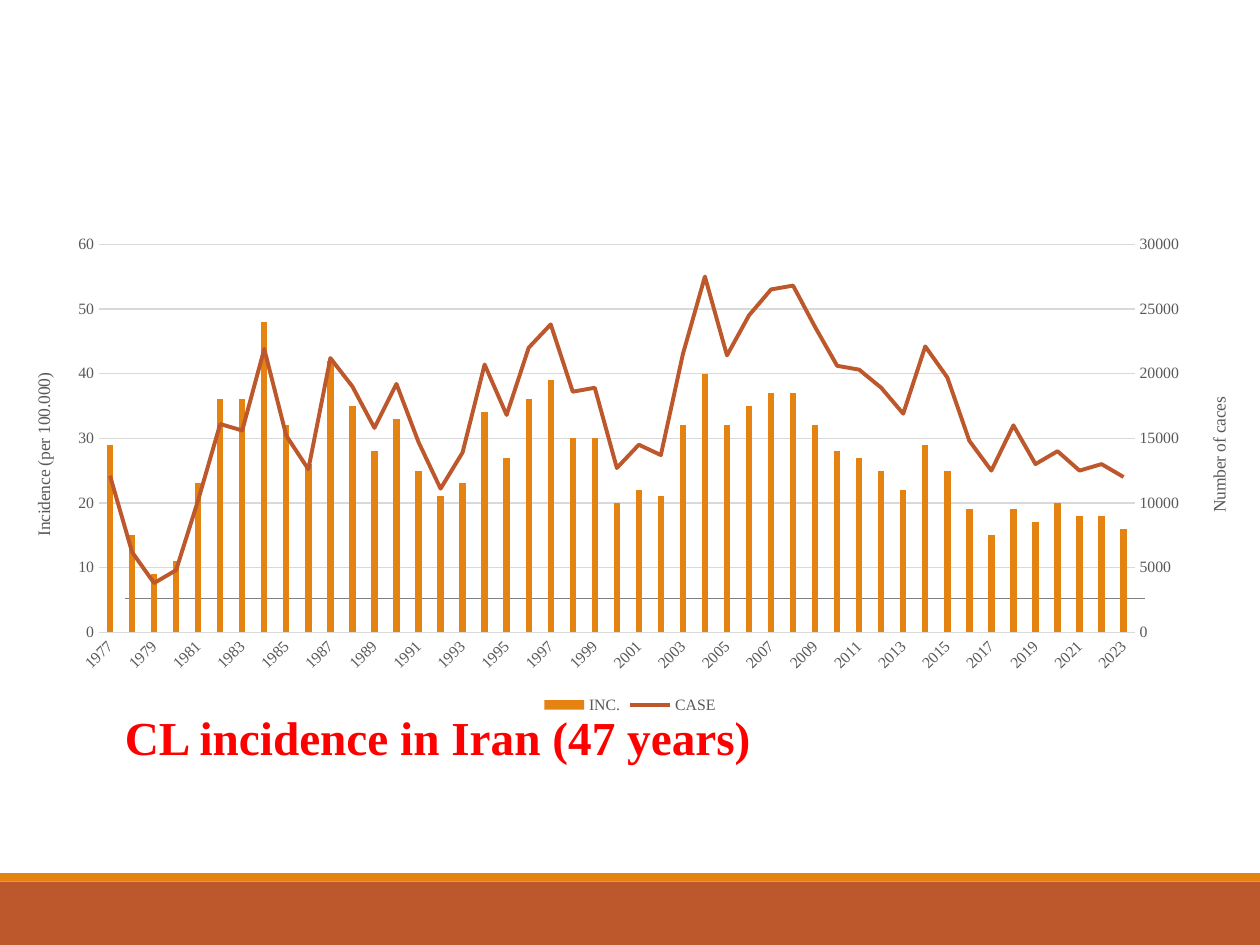
import copy
import dataclasses

import pptx
import pptx.chart.axis
import pptx.chart.data
import pptx.dml.color
import pptx.enum.chart
import pptx.enum.shapes
import pptx.enum.text
import pptx.oxml
import pptx.oxml.ns
import pptx.util

qn = pptx.oxml.ns.qn
WIDTH, HEIGHT = pptx.util.Inches(10), pptx.util.Inches(7.5)


@dataclasses.dataclass(frozen=True)
class Theme:
    font: str = "Times New Roman"
    incidence: str = "E48312"
    cases: str = "BD582C"
    heading: str = "FF0000"
    text: str = "000000"
    muted: str = "595959"
    grid: str = "D9D9D9"
    rule: str = "808080"
    heading_size: float = 27
    axis_title_size: float = 10
    label_size: float = 9


THEME = Theme()
YEARS = [str(year) for year in range(1977, 2024)]
INCIDENCE = [
    29, 15, 9, 11, 23, 36, 36, 48, 32, 26, 42, 35, 28, 33, 25, 21,
    23, 34, 27, 36, 39, 30, 30, 20, 22, 21, 32, 40, 32, 35, 37, 37,
    32, 28, 27, 25, 22, 29, 25, 19, 15, 19, 17, 20, 18, 18, 16,
]
CASES = [
    12100, 6200, 3800, 4800, 10200, 16100, 15600, 21900, 15200, 12600,
    21200, 19000, 15800, 19200, 14700, 11100, 13900, 20700, 16800, 22000,
    23800, 18600, 18900, 12700, 14500, 13700, 21500, 27500, 21400, 24500,
    26500, 26800, 23600, 20600, 20300, 18900, 16900, 22100, 19700, 14800,
    12500, 16000, 13000, 14000, 12500, 13000, 12000,
]


def percent(left, top, width, height):
    lengths = (left * WIDTH, top * HEIGHT, width * WIDTH, height * HEIGHT)
    return [round(length / 100) for length in lengths]


def rgb(color):
    return pptx.dml.color.RGBColor.from_string(color)


def style_font(font, size, color, bold=False):
    font.name = THEME.font
    font.size = pptx.util.Pt(size)
    font.bold = bold
    font.color.rgb = rgb(color)


def write_text(frame, text, size, color, bold=False, align=None):
    paragraph = frame.paragraphs[0]
    paragraph.alignment = align
    run = paragraph.add_run()
    run.text = text
    style_font(run.font, size, color, bold)


def style_line(line, color, width):
    line.color.rgb = rgb(color)
    line.width = pptx.util.Pt(width)


def chart_xml(markup):
    return pptx.oxml.parse_xml(markup.replace(">", f' {pptx.oxml.ns.nsdecls("c", "a")}>', 1))


def layout_xml(inner=False, **percents):
    target = '<c:layoutTarget val="inner"/>' if inner else ""
    modes = '<c:xMode val="edge"/><c:yMode val="edge"/>'
    parts = "".join(f'<c:{key} val="{value / 100}"/>' for key, value in percents.items())
    return chart_xml(f"<c:layout><c:manualLayout>{target}{modes}{parts}</c:manualLayout></c:layout>")


def add_band(slide, top, height, color):
    band = slide.shapes.add_shape(
        pptx.enum.shapes.MSO_SHAPE.RECTANGLE, *percent(0, top, 100, height))
    band.shadow.inherit = False
    band.fill.solid()
    band.fill.fore_color.rgb = rgb(color)
    band.line.fill.background()


def add_rule(slide, left, right, y):
    rule = slide.shapes.add_connector(
        pptx.enum.shapes.MSO_CONNECTOR.STRAIGHT, *percent(left, y, right, y))
    style_line(rule.line, THEME.rule, 0.5)
    rule._element.spPr.append(chart_xml("<a:effectLst></a:effectLst>"))


def add_heading(slide, text):
    heading = slide.shapes.title
    heading.left, heading.top, heading.width, heading.height = percent(8.9, 74.2, 71.2, 7.5)
    frame = heading.text_frame
    frame.word_wrap = True
    frame.auto_size = pptx.enum.text.MSO_AUTO_SIZE.NONE
    frame.vertical_anchor = pptx.enum.text.MSO_ANCHOR.MIDDLE
    write_text(frame, text, THEME.heading_size, THEME.heading, bold=True,
               align=pptx.enum.text.PP_ALIGN.LEFT)


def style_axis(axis):
    axis.major_tick_mark = axis.minor_tick_mark = pptx.enum.chart.XL_TICK_MARK.NONE
    style_font(axis.tick_labels.font, THEME.label_size, THEME.muted)


def style_value_axis(axis, title, x, y, maximum, step):
    style_axis(axis)
    axis.minimum_scale, axis.maximum_scale, axis.major_unit = 0, maximum, step
    axis.format.line.fill.background()
    axis.tick_labels.number_format = "General"
    axis.tick_labels.number_format_is_linked = False
    frame = axis.axis_title.text_frame
    write_text(frame, title, THEME.axis_title_size, THEME.muted)
    body = frame._txBody.find(qn("a:bodyPr"))
    body.set("rot", "-5400000")
    body.set("vert", "horz")
    title_element = axis._element.find(qn("c:title"))
    for old in title_element.findall(qn("c:layout")):
        title_element.remove(old)
    title_element.find(qn("c:tx")).addnext(layout_xml(x=x, y=y))


def move_cases_to_right_axis(chart):
    bars = chart.plots[0]._element
    plot_area = bars.getparent()
    cases = bars.findall(qn("c:ser"))[1]
    for flag in cases.findall(qn("c:invertIfNegative")):
        cases.remove(flag)
    lines = chart_xml(
        '<c:lineChart><c:grouping val="standard"/><c:varyColors val="0"/>'
        '<c:marker val="1"/><c:axId val="5001"/><c:axId val="5002"/></c:lineChart>')
    lines.insert(2, cases)
    bars.addnext(lines)
    left_values = chart.value_axis._element
    years, values = map(copy.deepcopy, (chart.category_axis._element, left_values))
    for element, own, other in ((years, "5001", "5002"), (values, "5002", "5001")):
        element.find(qn("c:axId")).set("val", own)
        element.find(qn("c:crossAx")).set("val", other)
    left_values.addnext(values)
    values.addnext(years)
    pptx.chart.axis.CategoryAxis(years).visible = False
    values.find(qn("c:axPos")).set("val", "r")
    values.find(qn("c:crosses")).set("val", "max")
    right_axis = pptx.chart.axis.ValueAxis(values)
    right_axis.has_major_gridlines = False
    for old in plot_area.findall(qn("c:layout")):
        plot_area.remove(old)
    plot_area.insert(0, layout_xml(inner=True, x=7.86, y=4.1, w=82.2, h=78.4))
    return right_axis


def add_incidence_chart(slide):
    data = pptx.chart.data.CategoryChartData()
    data.categories = YEARS
    data.add_series("INC.", INCIDENCE)
    data.add_series("CASE", CASES)
    chart = slide.shapes.add_chart(
        pptx.enum.chart.XL_CHART_TYPE.COLUMN_CLUSTERED,
        *percent(0, 23.7, 100, 52.4), data).chart
    chart.has_title = False
    style_font(chart.font, THEME.axis_title_size, THEME.text)
    chart._chartSpace.find(qn("c:chart")).addnext(
        chart_xml("<c:spPr><a:noFill/><a:ln><a:noFill/></a:ln></c:spPr>"))
    chart.has_legend = True
    chart.legend.position = pptx.enum.chart.XL_LEGEND_POSITION.BOTTOM
    chart.legend.include_in_layout = False
    style_font(chart.legend.font, THEME.label_size, THEME.muted)

    left_axis = chart.value_axis
    right_axis = move_cases_to_right_axis(chart)
    columns, lines = chart.plots
    columns.gap_width, columns.overlap = 247, -27
    columns.vary_by_categories = False
    fill = columns.series[0].format.fill
    fill.solid()
    fill.fore_color.rgb = rgb(THEME.incidence)
    cases = lines.series[0]
    cases.smooth = False
    cases.marker.style = pptx.enum.chart.XL_MARKER_STYLE.NONE
    style_line(cases.format.line, THEME.cases, 2.25)

    years = chart.category_axis
    style_axis(years)
    style_line(years.format.line, THEME.grid, 0.75)
    years._element.find(qn("c:txPr")).find(qn("a:bodyPr")).set("rot", "-2700000")
    style_value_axis(left_axis, "Incidence (per 100.000)", 2.3, 29.5, 60, 10)
    style_line(left_axis.major_gridlines.format.line, THEME.grid, 0.75)
    style_value_axis(right_axis, "Number of caces", 95.6, 34.3, 30000, 5000)


def main():
    deck = pptx.Presentation()
    deck.slide_width, deck.slide_height = WIDTH, HEIGHT
    slide = deck.slides.add_slide(deck.slide_layouts.get_by_name("Title Only"))
    add_band(slide, 93.3, 6.7, THEME.cases)
    add_band(slide, 92.4, 0.9, THEME.incidence)
    add_rule(slide, 9.9, 90.9, 63.3)
    add_incidence_chart(slide)
    add_heading(slide, "CL incidence in Iran (47 years)")
    deck.save("out.pptx")


if __name__ == "__main__":
    main()
